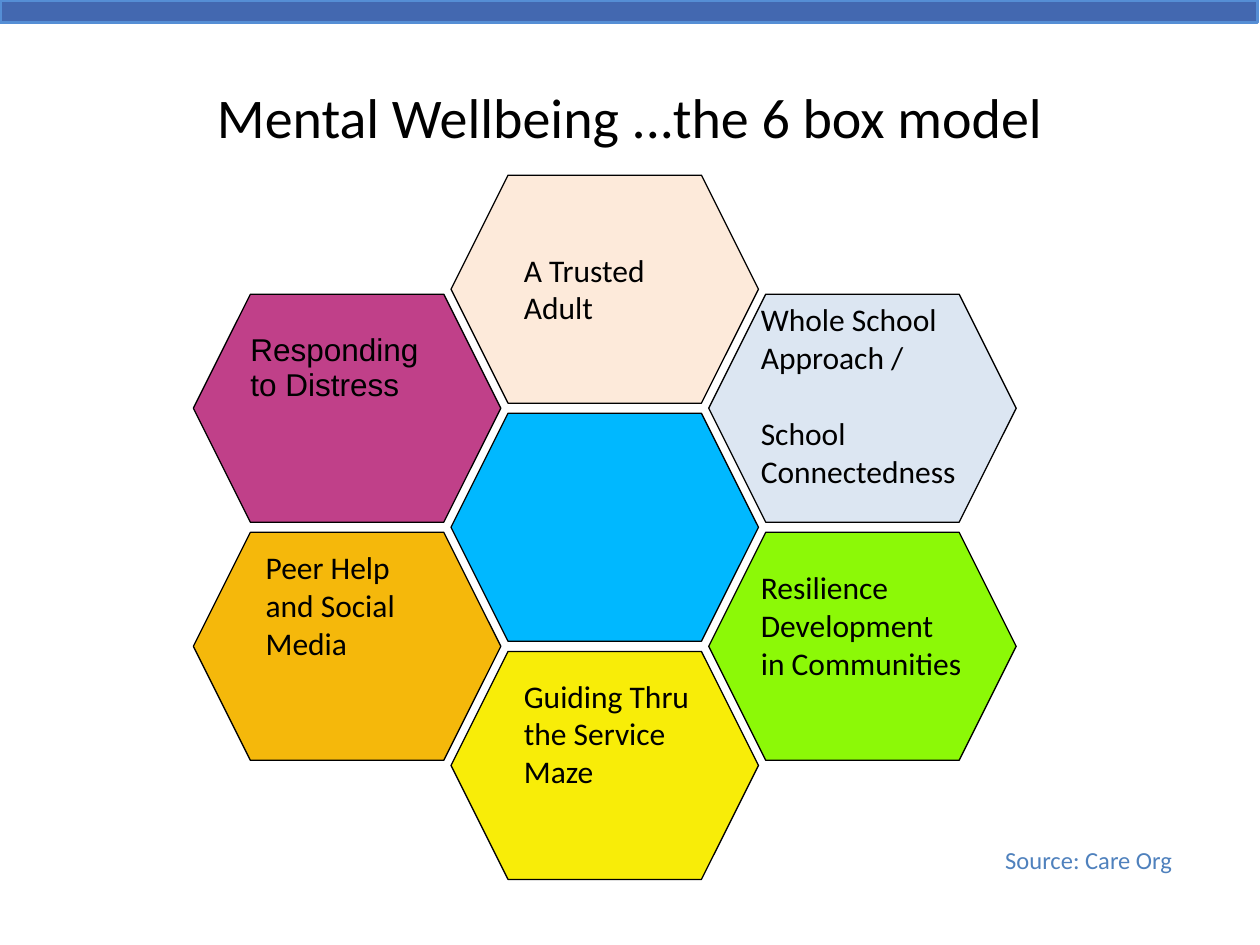
from pptx import Presentation
from pptx.dml.color import RGBColor
from pptx.enum.shapes import MSO_SHAPE
from pptx.enum.text import MSO_ANCHOR, PP_ALIGN
from pptx.util import Inches, Pt

RECTANGLE, HEXAGON = MSO_SHAPE.RECTANGLE, MSO_SHAPE.HEXAGON
TOP, MIDDLE = MSO_ANCHOR.TOP, MSO_ANCHOR.MIDDLE
LEFT, CENTER = PP_ALIGN.LEFT, PP_ALIGN.CENTER

COLORS = {
    "black": "000000", "bar": "4368B0", "bar edge": "558ED5",
    "source": "4F81BD", "peach": "FDEADA", "yellow": "F8ED08",
    "orange": "F5B80B", "magenta": "C04089", "pale blue": "DCE6F2",
    "green": "8CF907", "cyan": "00B8FF",
}

# Honeycomb: left and top of the centre cell, and its pitch in half steps
CENTER_LEFT, CENTER_TOP = 3.58, 3.28
COLUMN_STEP, ROW_STEP = 4.09 / 2, 1.89 / 2
CELL_WIDTH, CELL_HEIGHT = 2.44, 1.81

# Colour, column and row counted from the centre cell
CELLS = [
    ("peach", 0, -2), ("yellow", 0, 2), ("orange", -1, 1),
    ("magenta", -1, -1), ("pale blue", 1, -1), ("green", 1, 1),
    ("cyan", 0, 0),
]

LABELS = [
    (["A Trusted Adult"], (4.06, 1.94, 1.65, 0.71)),
    (["Whole School Approach /", "School Connectedness"],
     (5.94, 2.33, 1.97, 1.62)),
    (["Resilience Development in Communities"], (5.94, 4.46, 1.81, 1.31)),
    (["Peer Help and Social Media"], (2.01, 4.3, 1.42, 1.01)),
    (["Guiding Thru the Service Maze"], (4.06, 5.32, 1.57, 1.31)),
]


class SlideBuilder:
    def __init__(self, page, font="Calibri", size=18):
        self.page = page
        self.font = font
        self.size = size

    def color(self, name):
        return RGBColor.from_string(COLORS[name])

    def shape(self, kind, place, fill, line="black", weight=0.75):
        shape = self.page.shapes.add_shape(kind, *map(Inches, place))
        shape.shadow.inherit = False
        shape.fill.solid()
        shape.fill.fore_color.rgb = self.color(fill)
        shape.line.color.rgb = self.color(line)
        shape.line.width = Pt(weight)
        return shape

    def fill_text(self, frame, lines, size=None, color="black", font=None,
                  align=LEFT, anchor=TOP, gap=0, spacing=None):
        """Fill a text frame; gap is the space in points between paragraphs."""
        frame.word_wrap = True
        frame.vertical_anchor = anchor
        for index, line in enumerate(lines):
            para = frame.add_paragraph() if index else frame.paragraphs[0]
            para.text = line
            para.alignment = align
            para.line_spacing = spacing
            para.space_before = Pt(gap if index else 0)
            para.font.name = font or self.font
            para.font.size = Pt(size or self.size)
            para.font.color.rgb = self.color(color)

    def text(self, lines, place, **style):
        box = self.page.shapes.add_textbox(*map(Inches, place))
        self.fill_text(box.text_frame, lines, **style)


def main():
    deck = Presentation()
    deck.slide_width, deck.slide_height = Inches(10), Inches(7.5)
    builder = SlideBuilder(deck.slides.add_slide(deck.slide_layouts[6]))

    builder.shape(RECTANGLE, (0, 0, 9.98, 0.18), "bar", "bar edge", 2)
    builder.text(["Mental Wellbeing ...the 6 box model"], (0.5, 0.3, 9, 1.25),
                 size=32, align=CENTER, anchor=MIDDLE)
    builder.text(["Source: Care Org"], (7.88, 6.66, 1.7, 0.34),
                 size=14, color="source")

    for fill, column, row in CELLS:
        place = (CENTER_LEFT + column * COLUMN_STEP,
                 CENTER_TOP + row * ROW_STEP, CELL_WIDTH, CELL_HEIGHT)
        cell = builder.shape(HEXAGON, place, fill)
        if fill == "magenta":
            builder.fill_text(cell.text_frame, ["Responding to Distress"],
                              font="Arial", spacing=0.93)

    for lines, place in LABELS:
        builder.text(lines, place, gap=22)

    deck.save("out.pptx")


if __name__ == "__main__":
    main()
